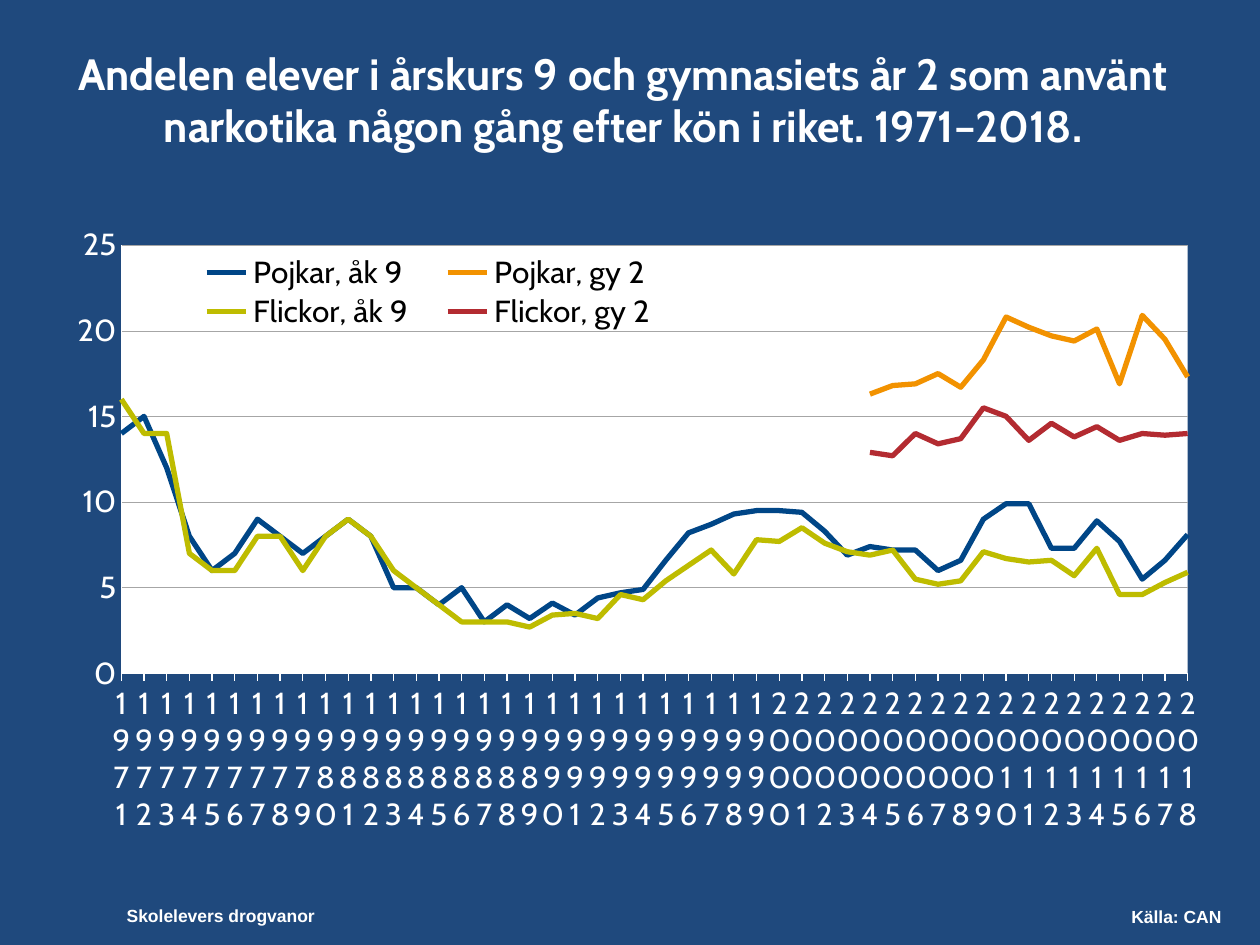
"""Build the slide on pupils' drug use by grade and sex, 1971–2018."""
from lxml import etree
from pptx import Presentation
from pptx.chart.data import CategoryChartData
from pptx.dml.color import RGBColor
from pptx.enum.chart import XL_CHART_TYPE, XL_LEGEND_POSITION, XL_TICK_MARK
from pptx.enum.text import MSO_ANCHOR, PP_ALIGN
from pptx.oxml import parse_xml
from pptx.oxml.ns import nsdecls, qn
from pptx.util import Pt

LINE = XL_CHART_TYPE.LINE
TOP_LEGEND = XL_LEGEND_POSITION.TOP
TICK_OUT, TICK_NONE = XL_TICK_MARK.OUTSIDE, XL_TICK_MARK.NONE
TOP, MIDDLE = MSO_ANCHOR.TOP, MSO_ANCHOR.MIDDLE
LEFT, CENTER = PP_ALIGN.LEFT, PP_ALIGN.CENTER

THEME = {
    "background": "1F497D", "text": "FFFFFF", "plot": "FFFFFF",
    "grid": "A6A6A6", "legend": "000000",
    "title_font": "Cabin", "footer_font": "Arial",
    "title_size": 25, "footer_size": 10, "chart_size": 18,
    "series_width": 3, "axis_width": 0.75, "thin_width": 0.23,
}

TITLE = ("Andelen elever i årskurs 9 och gymnasiets år 2 som använt "
         "narkotika någon gång efter kön i riket. 1971–2018.")
TEXTS = [
    (TITLE, (28, 16.5, 656, 80), "title", MIDDLE, CENTER),
    ("Skolelevers drogvanor", (65.3, 513.4, 137, 32), "footer", TOP, LEFT),
    ("Källa: CAN", (639.4, 514.1, 75, 19.4), "footer", TOP, LEFT),
]

YEARS = range(1971, 2019)
SERIES = [
    ("Pojkar, åk 9", "004687", [
        14, 15, 12, 8, 6, 7, 9, 8, 7, 8, 9, 8, 5, 5, 4, 5, 3, 4, 3.2, 4.1,
        3.4, 4.4, 4.7, 4.9, 6.6, 8.2, 8.7, 9.3, 9.5, 9.5, 9.4, 8.3, 6.9, 7.4,
        7.2, 7.2, 6, 6.6, 9, 9.9, 9.9, 7.3, 7.3, 8.9, 7.7, 5.5, 6.6, 8.1]),
    ("Pojkar, gy 2", "F29200", [
        16.3, 16.8, 16.9, 17.5, 16.7, 18.3, 20.8, 20.2, 19.7, 19.4, 20.1,
        16.9, 20.9, 19.5, 17.3]),
    ("Flickor, åk 9", "BEBC00", [
        16, 14, 14, 7, 6, 6, 8, 8, 6, 8, 9, 8, 6, 5, 4, 3, 3, 3, 2.7, 3.4,
        3.5, 3.2, 4.6, 4.3, 5.4, 6.3, 7.2, 5.8, 7.8, 7.7, 8.5, 7.6, 7.1, 6.9,
        7.2, 5.5, 5.2, 5.4, 7.1, 6.7, 6.5, 6.6, 5.7, 7.3, 4.6, 4.6, 5.3, 5.9]),
    ("Flickor, gy 2", "B32B31", [
        12.9, 12.7, 14, 13.4, 13.7, 15.5, 15, 13.6, 14.6, 13.8, 14.4, 13.6,
        14, 13.9, 14]),
]
CHART_FRAME = (28, 112.3, 666.7, 363.6)
PLOT_SHARE = (0.062, 0.079, 0.914, 0.696)
LEGEND_SHARE = (0.11, 0.09, 0.43, 0.13)


def color(name):
    return RGBColor.from_string(THEME[name])


def style_font(font, family, size, fill, bold):
    font.name, font.size, font.bold = family, Pt(size), bold
    font.color.rgb = color(fill)


def style_line(line, fill, width):
    line.color.rgb = fill
    line.width = Pt(width)


def add_text(page, text, frame, role, anchor, alignment):
    box = page.shapes.add_textbox(*map(Pt, frame))
    box.text_frame.word_wrap = True
    box.text_frame.vertical_anchor = anchor
    para = box.text_frame.paragraphs[0]
    para.alignment = alignment
    span = para.add_run()
    span.text = text
    style_font(span.font, THEME[role + "_font"], THEME[role + "_size"], "text", True)


def manual_layout(shares, inner=False):
    target = '<c:layoutTarget val="inner"/>' if inner else ""
    modes = "".join(f'<c:{axis}Mode val="edge"/>' for axis in "xy")
    sizes = "".join(f'<c:{key} val="{share}"/>' for key, share in zip("xywh", shares))
    return parse_xml(f'<c:layout {nsdecls("c")}><c:manualLayout>{target}{modes}'
                     f'{sizes}</c:manualLayout></c:layout>')


def style_axis(axis, tick, width):
    axis.major_tick_mark, axis.minor_tick_mark = tick, TICK_NONE
    style_font(axis.tick_labels.font, THEME["title_font"], THEME["chart_size"], "text", False)
    style_line(axis.format.line, color("text"), width)


def add_line_chart(page):
    data = CategoryChartData()
    data.categories = [str(year) for year in YEARS]
    for name, _, values in SERIES:
        data.add_series(name, [None] * (len(YEARS) - len(values)) + values)
    chart = page.shapes.add_chart(LINE, *map(Pt, CHART_FRAME), data).chart
    chart.has_title = False
    style_font(chart.font, THEME["title_font"], THEME["chart_size"], "text", False)

    plot = chart.plots[0]
    plot.vary_by_categories = False
    for series, (_, fill, _) in zip(plot.series, SERIES):
        series.smooth = False
        style_line(series.format.line, RGBColor.from_string(fill), THEME["series_width"])

    years, shares = chart.category_axis, chart.value_axis
    style_axis(years, TICK_OUT, THEME["axis_width"])
    style_axis(shares, TICK_NONE, THEME["thin_width"])
    years.has_major_gridlines = False
    shares.minimum_scale, shares.maximum_scale, shares.major_unit = 0, 25, 5
    shares.has_major_gridlines = True
    style_line(shares.major_gridlines.format.line, color("grid"), THEME["thin_width"])

    chart.has_legend = True
    legend = chart.legend
    legend.position, legend.include_in_layout = TOP_LEGEND, False
    style_font(legend.font, THEME["title_font"], THEME["chart_size"], "legend", False)
    arrange_chart(chart)


def arrange_chart(chart):
    area = chart.plots[0]._element.getparent()
    for layout in area.findall(qn("c:layout")):
        area.remove(layout)
    area.insert(0, manual_layout(PLOT_SHARE, True))
    area.append(parse_xml(
        f'<c:spPr {nsdecls("c", "a")}><a:solidFill><a:srgbClr val="{THEME["plot"]}"/>'
        '</a:solidFill><a:ln><a:noFill/></a:ln></c:spPr>'))

    legend = chart.legend._element
    for layout in legend.findall(qn("c:layout")):
        legend.remove(layout)
    legend.find(qn("c:legendPos")).addnext(manual_layout(LEGEND_SHARE))

    years = chart.category_axis._element
    body = years.find(qn("c:txPr")).find(qn("a:bodyPr"))
    body.set("rot", "0")
    body.set("vert", "horz")
    skip = etree.Element(qn("c:tickLblSkip"), val="1")
    years.find(qn("c:noMultiLvlLbl")).addprevious(skip)

    shares = chart.value_axis._element
    crossing = shares.find(qn("c:crossBetween"))
    if crossing is None:
        crossing = etree.Element(qn("c:crossBetween"))
        shares.find(qn("c:crosses")).addnext(crossing)
    crossing.set("val", "midCat")


def main():
    deck = Presentation()
    deck.slide_width, deck.slide_height = Pt(720), Pt(540)
    page = deck.slides.add_slide(deck.slide_layouts[6])
    page.background.fill.solid()
    page.background.fill.fore_color.rgb = color("background")
    for text in TEXTS:
        add_text(page, *text)
    add_line_chart(page)
    deck.save("out.pptx")


if __name__ == "__main__":
    main()
